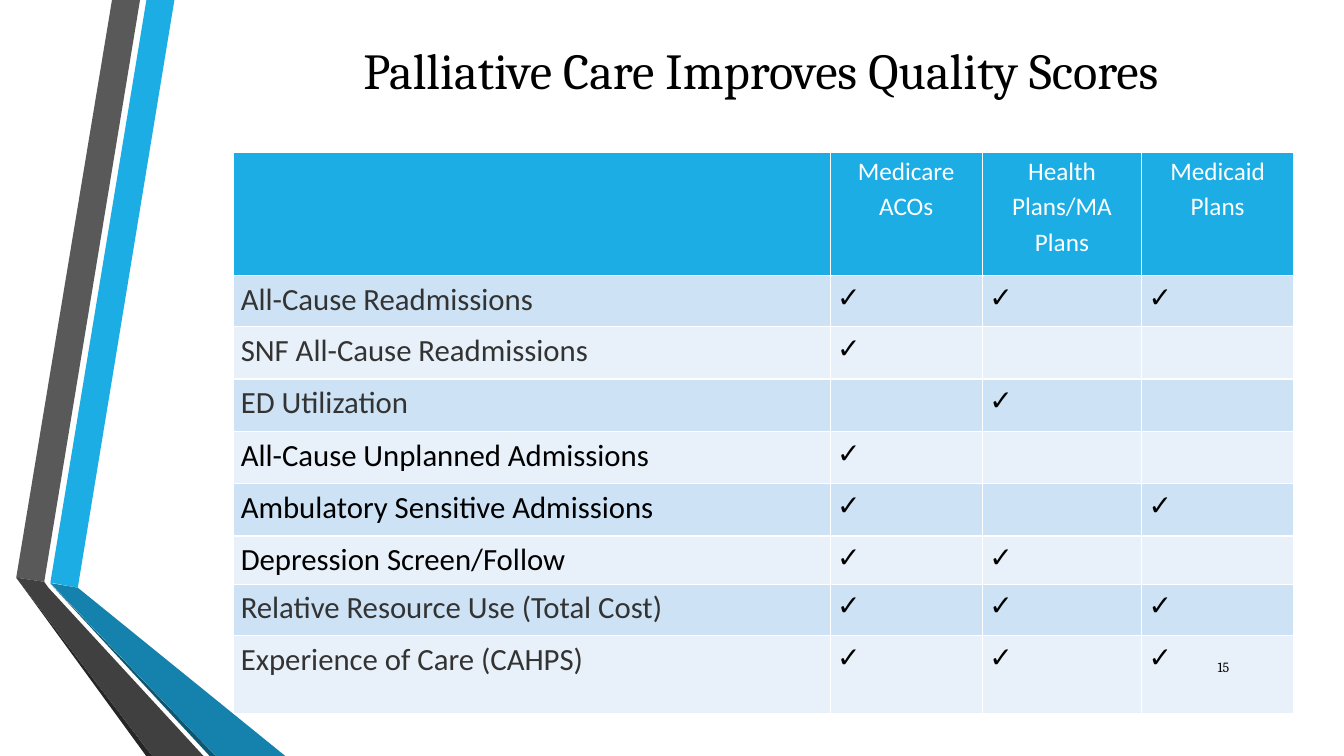
import pptx
import pptx.util
import pptx.dml.color
import pptx.enum.text
import pptx.oxml
import pptx.oxml.ns

Pt = pptx.util.Pt
ALIGN = pptx.enum.text.PP_ALIGN
MIDDLE = pptx.enum.text.MSO_ANCHOR.MIDDLE

COLORS = {
    "blue": "1CADE4", "teal": "1482AC", "navy": "0E5772",
    "gray": "595959", "dark": "404040", "coal": "262626",
    "band": "CDE3F5", "pale": "E8F1FA",
    "white": "FFFFFF", "black": "000000", "ink": "333333",
}

RIBBONS = [
    ("blue", [(36, 416.2), (55.6, 419.8), (124.6, 0), (104.6, 0)]),
    ("gray", [(100, 0), (80, 0), (11.6, 412.6), (31.6, 415.6)]),
    ("coal", [(11.6, 412.6), (104.4, 540), (108.7, 540)]),
    ("navy", [(36, 416.9), (149.8, 540), (154.1, 540)]),
    ("teal", [(36, 416.5), (154.1, 540), (203.8, 540), (55.6, 419.8)]),
    ("dark", [(145.4, 540), (34.6, 419.8), (31.6, 415.6), (11.6, 412.6),
              (108.7, 540)]),
]

HEADS = [[], ["Medicare ACOs"], ["Health Plans/MA Plans"], ["Medicaid", "Plans"]]
WIDTHS = [426, 108.7, 113.8, 108.7]
HEAD_HIGH = 88.3
SCORES = [
    ("All-Cause Readmissions", "ink", (1, 2, 3), 36.5),
    ("SNF All-Cause Readmissions", "ink", (1,), 37.4),
    ("ED Utilization", "ink", (2,), 37.4),
    ("All-Cause Unplanned Admissions", "black", (1,), 37.4),
    ("Ambulatory Sensitive Admissions", "black", (1, 3), 37.4),
    ("Depression Screen/Follow", "black", (1, 2), 34.4),
    ("Relative Resource Use (Total Cost)", "ink", (1, 2, 3), 36.5),
    ("Experience of Care (CAHPS)", "ink", (1, 2, 3), 55.7),
]


def rgb(name):
    """Return the named colour."""
    return pptx.dml.color.RGBColor.from_string(COLORS[name])


def add_run(para, text, size, color, face="Calibri", bold=False):
    """Add one formatted run to a paragraph."""
    run = para.add_run()
    run.text = text
    run.font.size = Pt(size)
    run.font.name = face
    run.font.bold = bold
    run.font.color.rgb = rgb(color)


def add_ribbon(slide, color, points):
    """Draw one filled polygon of the side ribbon."""
    spots = [(Pt(x), Pt(y)) for x, y in points]
    pen = slide.shapes.build_freeform(*spots[0])
    pen.add_line_segments(spots[1:], close=True)
    shape = pen.convert_to_shape()
    shape.shadow.inherit = False
    shape.fill.solid()
    shape.fill.fore_color.rgb = rgb(color)
    shape.line.fill.background()


def add_title(slide, text):
    """Place and fill the title."""
    title = slide.shapes.title
    title.left, title.top, title.width, title.height = map(Pt, (191.5, 7.2, 704, 84.2))
    frame = title.text_frame
    frame.word_wrap = True
    frame.vertical_anchor = MIDDLE
    para = frame.paragraphs[0]
    para.alignment = ALIGN.CENTER
    add_run(para, text, 36, "black", "Cambria")


def add_edges(cell):
    """Give a cell thin white borders."""
    props = cell._tc.get_or_add_tcPr()
    space = pptx.oxml.ns.nsdecls("a")
    for side in "LRTB":
        props.append(pptx.oxml.parse_xml(
            f'<a:ln{side} {space} w="{Pt(1)}"><a:solidFill>'
            f'<a:srgbClr val="{COLORS["white"]}"/></a:solidFill></a:ln{side}>'))


def fill_cell(cell, fill, lines, size, color, bold=False, align=ALIGN.LEFT):
    """Style a cell and write its lines."""
    add_edges(cell)
    cell.fill.solid()
    cell.fill.fore_color.rgb = rgb(fill)
    cell.margin_left = cell.margin_right = Pt(5)
    cell.margin_top = cell.margin_bottom = 0
    frame = cell.text_frame
    for i, line in enumerate(lines):
        para = frame.add_paragraph() if i else frame.paragraphs[0]
        para.alignment = align
        para.line_spacing = 1.15
        add_run(para, line, size, color, bold=bold)


def add_grid(slide):
    """Build the table of quality scores."""
    highs = [HEAD_HIGH] + [score[3] for score in SCORES]
    table = slide.shapes.add_table(
        len(highs), len(WIDTHS), Pt(167), Pt(108.5),
        Pt(sum(WIDTHS)), Pt(sum(highs))).table
    for col, wide in zip(table.columns, WIDTHS):
        col.width = Pt(wide)
    for row, high in zip(table.rows, highs):
        row.height = Pt(high)
    for c, lines in enumerate(HEADS):
        fill_cell(table.cell(0, c), "blue", lines, 18, "white", align=ALIGN.CENTER)
    for r, (label, color, plans, _) in enumerate(SCORES, 1):
        fill = "band" if r % 2 else "pale"
        fill_cell(table.cell(r, 0), fill, [label], 22, color)
        for c in range(1, len(WIDTHS)):
            marks = ["✓"] if c in plans else []
            fill_cell(table.cell(r, c), fill, marks, 20, "black", bold=True)


def add_number(slide, text):
    """Add the page number."""
    box = slide.shapes.add_textbox(Pt(862.6), Pt(462.2), Pt(43.2), Pt(28.8))
    frame = box.text_frame
    frame.word_wrap = True
    frame.vertical_anchor = MIDDLE
    add_run(frame.paragraphs[0], text, 10, "black", "Cambria")


def main():
    """Build and save the slide."""
    deck = pptx.Presentation()
    deck.slide_width, deck.slide_height = Pt(960), Pt(540)
    slide = deck.slides.add_slide(deck.slide_layouts[5])
    for color, points in RIBBONS:
        add_ribbon(slide, color, points)
    add_title(slide, "Palliative Care Improves Quality Scores")
    add_grid(slide)
    add_number(slide, "15")
    deck.save("out.pptx")


if __name__ == "__main__":
    main()
